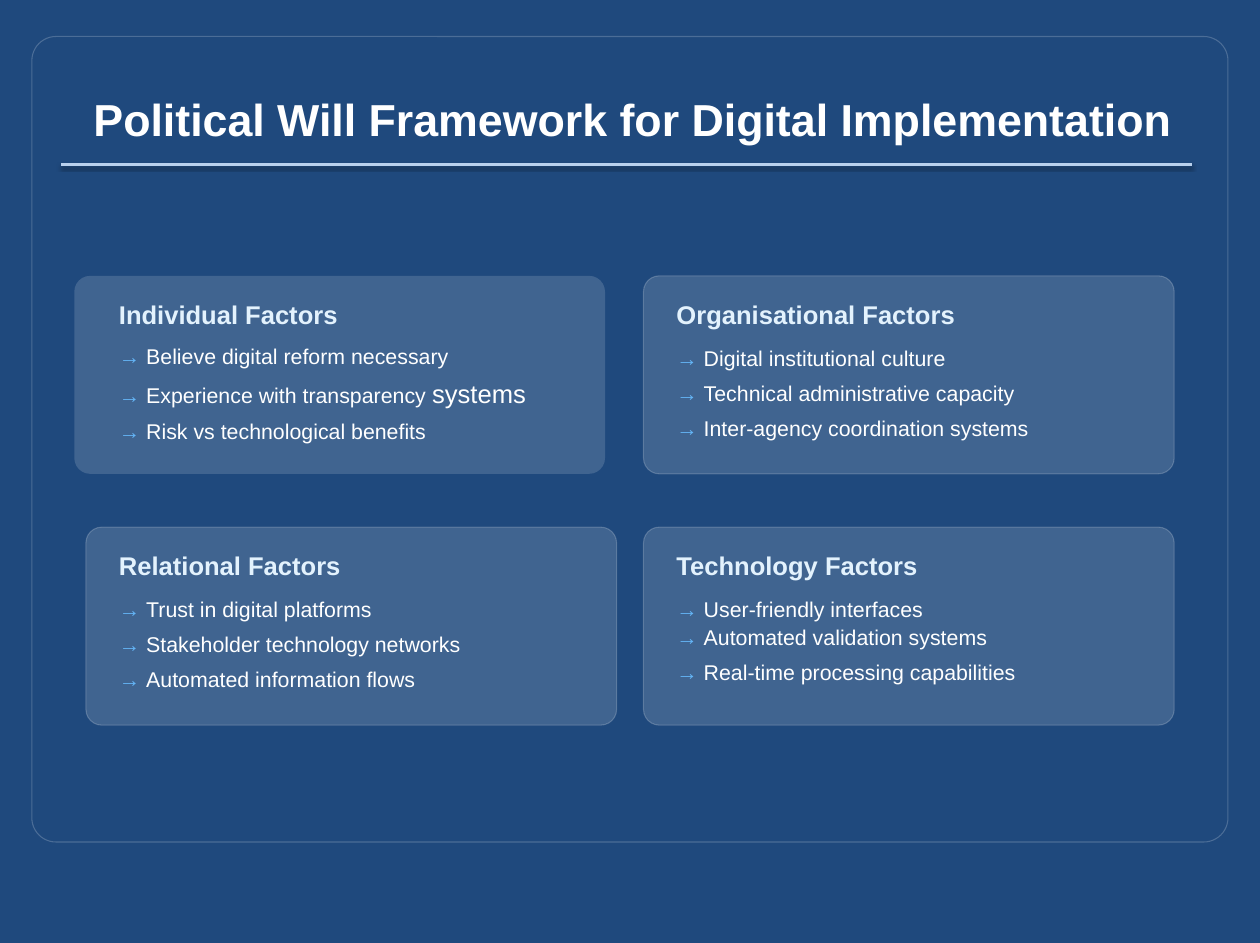
from dataclasses import dataclass

from lxml import etree
from pptx import Presentation
from pptx.dml.color import RGBColor
from pptx.enum.shapes import MSO_CONNECTOR, MSO_SHAPE
from pptx.oxml.ns import qn
from pptx.util import Inches, Pt

STRAIGHT = MSO_CONNECTOR.STRAIGHT
ROUNDED_RECTANGLE = MSO_SHAPE.ROUNDED_RECTANGLE

SLIDE_WIDTH, SLIDE_HEIGHT = 16.43, 12.29
NAVY, WHITE, PALE_BLUE = "1F497D", "FFFFFF", "E3F2FD"
ARROW_BLUE, RULE_BLUE = "64B5F6", "B8D0ED"
BODY_SIZE, HEADING_SIZE, TITLE_SIZE = 20, 24, 42

# Card grid, in percent of the slide's width or height
GRID_LEFT, GRID_TOP = 6.82, 29.25
COLUMN_STEP, ROW_STEP = 44.25, 26.65
CARD_WIDTH, CARD_HEIGHT = 42.12, 21
TEXT_INDENT, TEXT_DROP = 2.62, 2.44
TEXT_WIDTH, TEXT_HEIGHT = 38.9, 15.4


@dataclass(frozen=True)
class Card:
    heading: str
    items: tuple[str, ...]
    column: int
    row: int
    gaps: tuple[float, ...] = (14.5, 8.8, 8.8)
    shift: float = 0
    outlined: bool = True
    enlarged_ending: str = ""


CARDS = (
    Card("Individual Factors",
         ("Believe digital reform necessary",
          "Experience with transparency systems",
          "Risk vs technological benefits"),
         0, 0, gaps=(12.6, 8.8, 8.8), shift=-0.92, outlined=False,
         enlarged_ending="systems"),
    Card("Organisational Factors",
         ("Digital institutional culture",
          "Technical administrative capacity",
          "Inter-agency coordination systems"), 1, 0),
    Card("Relational Factors",
         ("Trust in digital platforms",
          "Stakeholder technology networks",
          "Automated information flows"), 0, 1),
    Card("Technology Factors",
         ("User-friendly interfaces",
          "Automated validation systems",
          "Real-time processing capabilities"), 1, 1, gaps=(14.5, 2.2, 8.8)),
)


def color(hex_code: str) -> RGBColor:
    return RGBColor.from_string(hex_code)


def across(percent: float) -> int:
    return Inches(SLIDE_WIDTH * percent / 100)


def down(percent: float) -> int:
    return Inches(SLIDE_HEIGHT * percent / 100)


def set_opacity(element, percent: float) -> None:
    """Make the first colour found inside the element partly transparent."""
    rgb = element.find(".//" + qn("a:srgbClr"))
    etree.SubElement(rgb, qn("a:alpha"), val=str(int(percent * 1000)))


def add_panel(slide, left: float, top: float, width: float, height: float,
              *, corner: float, filled: bool, outlined: bool) -> None:
    """Draw a rounded panel of translucent white."""
    shape = slide.shapes.add_shape(ROUNDED_RECTANGLE, across(left), down(top),
                                   across(width), down(height))
    shape.adjustments[0] = corner
    shape.shadow.inherit = False
    properties = shape.element.spPr
    if filled:
        shape.fill.solid()
        shape.fill.fore_color.rgb = color(WHITE)
        set_opacity(properties, 15)
    else:
        shape.fill.background()
    if outlined:
        shape.line.width = Pt(1)
        shape.line.color.rgb = color(WHITE)
        set_opacity(properties.find(qn("a:ln")), 20)
    else:
        shape.line.fill.background()


def add_text_frame(slide, left: float, top: float, width: float, height: float,
                   margin: float = 0):
    box = slide.shapes.add_textbox(across(left), down(top), across(width), down(height))
    frame = box.text_frame
    frame.word_wrap = True
    frame.margin_left = frame.margin_right = Inches(margin)
    frame.margin_top = frame.margin_bottom = Inches(margin / 2)
    return frame


def add_run(paragraph, text: str, *, size: float = BODY_SIZE,
            hex_code: str = WHITE, bold: bool = False) -> None:
    run = paragraph.add_run()
    run.text = text
    run.font.name = "Arial"
    run.font.size = Pt(size)
    run.font.bold = bold
    run.font.color.rgb = color(hex_code)


def add_card(slide, card: Card) -> None:
    left = GRID_LEFT + card.column * COLUMN_STEP
    top = GRID_TOP + card.row * ROW_STEP
    add_panel(slide, left + card.shift, top, CARD_WIDTH, CARD_HEIGHT,
              corner=0.08, filled=True, outlined=card.outlined)
    frame = add_text_frame(slide, left + TEXT_INDENT, top + TEXT_DROP,
                           TEXT_WIDTH, TEXT_HEIGHT)
    add_run(frame.paragraphs[0], card.heading, size=HEADING_SIZE,
            hex_code=PALE_BLUE, bold=True)
    for item, gap in zip(card.items, card.gaps):
        paragraph = frame.add_paragraph()
        paragraph.space_before = Pt(gap)
        add_run(paragraph, "→ ", hex_code=ARROW_BLUE, bold=True)
        ending = card.enlarged_ending
        if ending and item.endswith(ending):
            add_run(paragraph, item.removesuffix(ending))
            add_run(paragraph, ending, size=HEADING_SIZE)
        else:
            add_run(paragraph, item)


def add_title(slide) -> None:
    frame = add_text_frame(slide, GRID_LEFT, 9.28, 87.34, 11.8, margin=0.1)
    add_run(frame.paragraphs[0], "Political Will Framework for Digital Implementation",
            size=TITLE_SIZE, bold=True)


def add_title_rule(slide) -> None:
    """Draw the line under the title with its soft shadow."""
    rule = slide.shapes.add_connector(STRAIGHT, across(4.87), down(17.46),
                                      across(94.58), down(17.46))
    rule.line.width = Pt(3)
    rule.line.color.rgb = color(RULE_BLUE)
    effects = etree.SubElement(rule.element.spPr, qn("a:effectLst"))
    shadow = etree.SubElement(effects, qn("a:outerShdw"), blurRad=str(Pt(3.1)),
                              dist=str(Pt(1.8)), dir="5400000", rotWithShape="0")
    etree.SubElement(shadow, qn("a:srgbClr"), val="000000")
    set_opacity(shadow, 35)


def main() -> None:
    presentation = Presentation()
    presentation.slide_width = Inches(SLIDE_WIDTH)
    presentation.slide_height = Inches(SLIDE_HEIGHT)
    slide = presentation.slides.add_slide(presentation.slide_layouts[6])
    slide.background.fill.solid()
    slide.background.fill.fore_color.rgb = color(NAVY)

    add_panel(slide, 2.53, 3.87, 94.93, 85.42, corner=0.03, filled=False, outlined=True)
    add_title(slide)
    add_title_rule(slide)
    for card in CARDS:
        add_card(slide, card)
    presentation.save("out.pptx")


if __name__ == "__main__":
    main()
